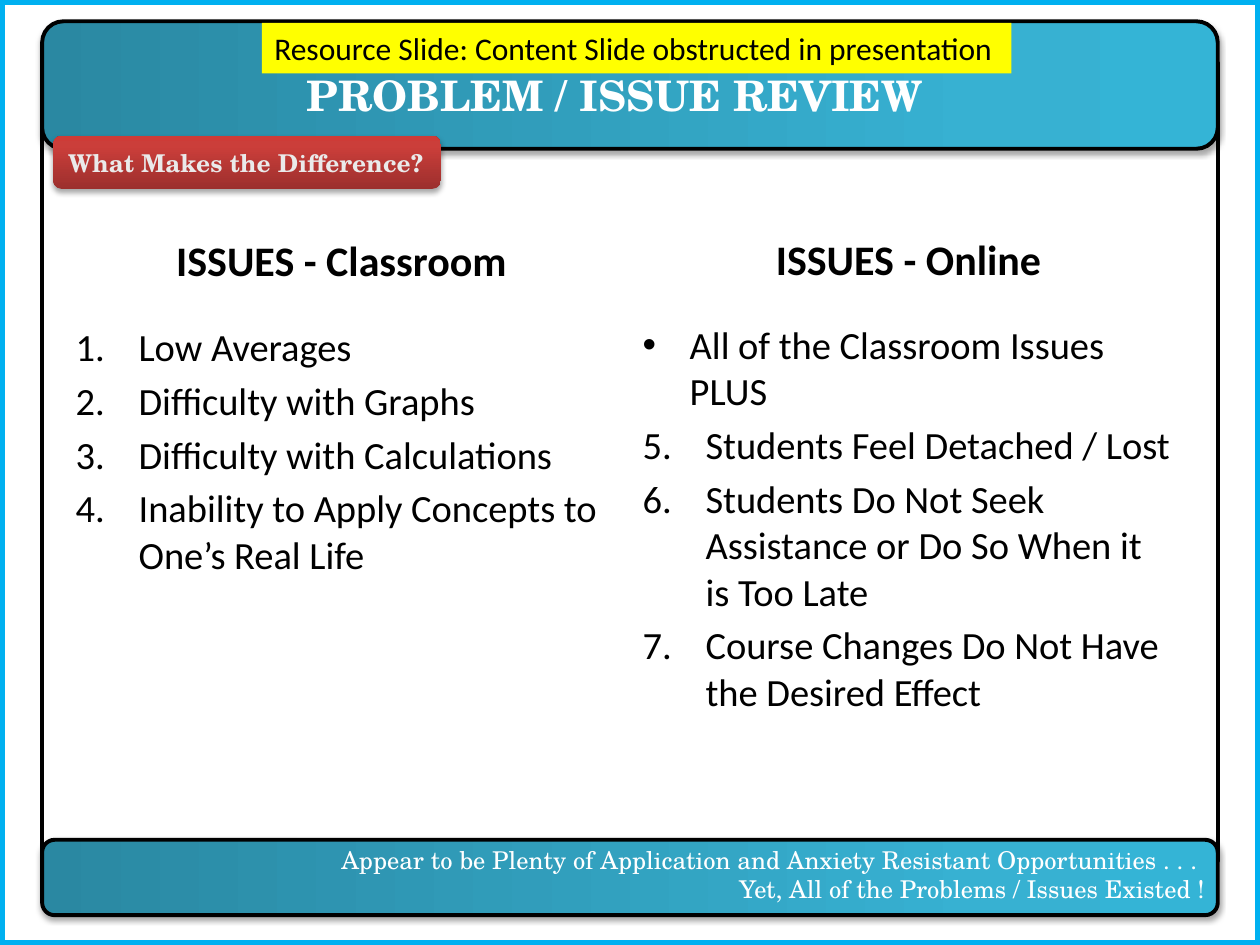
from copy import deepcopy
from dataclasses import dataclass

from lxml.etree import SubElement
from pptx import Presentation
from pptx.dml.color import RGBColor
from pptx.enum.shapes import MSO_SHAPE
from pptx.enum.text import MSO_ANCHOR, MSO_AUTO_SIZE, PP_ALIGN
from pptx.oxml.ns import qn
from pptx.util import Cm, Pt


@dataclass(frozen=True)
class Theme:
    serif: str = "TeX Gyre Schola"
    sans: str = "Calibri"
    white: str = "FFFFFF"
    ink: str = "000000"
    border: str = "00B0F0"
    callout_ink: str = "EAEAEA"
    highlight: str = "FFFF00"
    teal: tuple = ("2A88A2", "37B1D2", "34B4D6")
    red: tuple = ("9C2F2D", "CB3E3A", "CE3B37")
    heading_size: int = 24
    list_size: int = 22
    banner_size: int = 18
    note_size: int = 14


@dataclass(frozen=True)
class Box:
    left: float
    top: float
    width: float
    height: float

    def lengths(self):
        return Cm(self.left), Cm(self.top), Cm(self.width), Cm(self.height)


THEME = Theme()


def add_panel(slide, box, kind, fill=None, line=None, weight=0):
    panel = slide.shapes.add_shape(kind, *box.lengths())
    panel.shadow.inherit = False
    if fill:
        panel.fill.solid()
        panel.fill.fore_color.rgb = RGBColor.from_string(fill)
    if line:
        panel.line.color.rgb = RGBColor.from_string(line)
        panel.line.width = Pt(weight)
    else:
        panel.line.fill.background()
    return panel


def add_band(slide, box, colors, angle, line=None):
    band = add_panel(slide, box, MSO_SHAPE.FLOWCHART_ALTERNATE_PROCESS, line=line, weight=2.25)
    band.fill.gradient()
    band.fill.gradient_angle = angle
    stops = band.element.spPr.find(".//" + qn("a:gsLst"))
    stops.insert(1, deepcopy(stops[0]))
    for stop, position, color in zip(band.fill.gradient_stops, (0, 0.8, 1), colors):
        stop.position = position
        stop.color.rgb = RGBColor.from_string(color)
    effects = band.element.spPr.find(qn("a:effectLst"))
    shadow = SubElement(effects, qn("a:outerShdw"), blurRad=str(Pt(3.1)), dist=str(Pt(1.8)),
                        dir="5400000", rotWithShape="0")
    tint = SubElement(shadow, qn("a:srgbClr"), val=THEME.ink)
    SubElement(tint, qn("a:alpha"), val="35000")
    return band


def place(placeholder, box):
    placeholder.left, placeholder.top, placeholder.width, placeholder.height = box.lengths()
    placeholder.element.getparent().append(placeholder.element)


def write(holder, lines, font, size, color, bold=False, align=PP_ALIGN.LEFT,
          anchor=MSO_ANCHOR.MIDDLE, wrap=True):
    frame = holder.text_frame
    frame.text = "\n".join(lines)
    frame.word_wrap = wrap
    frame.auto_size = MSO_AUTO_SIZE.NONE
    frame.vertical_anchor = anchor
    for paragraph in frame.paragraphs:
        paragraph.alignment = align
        paragraph.font.name = font
        paragraph.font.size = Pt(size)
        paragraph.font.bold = bold
        paragraph.font.color.rgb = RGBColor.from_string(color)
    return frame.paragraphs


def set_marker(paragraph, indent, tag, **settings):
    properties = paragraph._p.get_or_add_pPr()
    properties.set("marL", str(Cm(indent)))
    properties.set("indent", str(-Cm(indent)))
    marker = properties.makeelement(qn(tag), settings)
    properties.insert_element_before(marker, "a:tabLst", "a:defRPr", "a:extLst")


def add_frame(slide, box):
    add_panel(slide, box, MSO_SHAPE.RECTANGLE, THEME.white, THEME.border, 6)
    inner = Box(box.left + 0.85, box.top + 1.27, box.width - 1.7, box.height - 2.97)
    add_panel(slide, inner, MSO_SHAPE.FLOWCHART_PROCESS, THEME.white, THEME.ink, 2.25)


def add_header(slide, box):
    add_band(slide, box, THEME.teal, 0, THEME.ink)
    title = slide.shapes.title
    place(title, Box(box.left + 3.6, box.top + 0.84, 15.88, 1.27))
    write(title, ["PROBLEM / ISSUE REVIEW"], THEME.serif, THEME.heading_size, THEME.white,
          bold=True, align=PP_ALIGN.CENTER)


def add_footer(slide, box):
    add_band(slide, box, THEME.teal, 0, THEME.ink)
    inner = Box(box.left + 0.62, box.top + 0.32, box.width - 0.62, 0.74)
    conclusion = slide.shapes.add_textbox(*inner.lengths())
    write(conclusion, ["Appear to be Plenty of Application and Anxiety Resistant Opportunities . . . ",
                       "Yet, All of the Problems / Issues Existed !"],
          THEME.serif, THEME.note_size, THEME.white, align=PP_ALIGN.RIGHT)


def add_callout(slide, box):
    callout = add_band(slide, box, THEME.red, 90)
    write(callout, ["What Makes the Difference?"], THEME.serif, THEME.note_size,
          THEME.callout_ink, bold=True)


def add_issues(slide, box, first_index, heading, issues, start=1, lead=None):
    heading_height = 1.78
    heading_holder = slide.placeholders[first_index]
    place(heading_holder, Box(box.left, box.top, box.width, heading_height))
    write(heading_holder, [heading], THEME.sans, THEME.heading_size, THEME.ink, bold=True,
          align=PP_ALIGN.CENTER, anchor=MSO_ANCHOR.TOP)

    issue_list = slide.placeholders[first_index + 1]
    place(issue_list, Box(box.left, box.top + heading_height, box.width,
                          box.height - heading_height))
    lines = [lead, *issues] if lead else issues
    paragraphs = write(issue_list, lines, THEME.sans, THEME.list_size, THEME.ink,
                       anchor=MSO_ANCHOR.TOP)
    for paragraph in paragraphs:
        if paragraph.text == lead:
            set_marker(paragraph, 0.95, "a:buChar", char="•")
        else:
            set_marker(paragraph, 1.27, "a:buAutoNum", type="arabicPeriod", startAt=str(start))


def add_banner(slide, box):
    banner = add_panel(slide, box, MSO_SHAPE.RECTANGLE, THEME.highlight)
    write(banner, ["Resource Slide: Content Slide obstructed in presentation"], THEME.sans,
          THEME.banner_size, THEME.ink, anchor=MSO_ANCHOR.TOP, wrap=False)


def main():
    deck = Presentation()
    deck.slide_width, deck.slide_height = Cm(25.4), Cm(19.05)
    slide = deck.slides.add_slide(deck.slide_layouts.get_by_name("Comparison"))
    add_frame(slide, Box(0, 0, 25.4, 19.05))
    add_header(slide, Box(0.85, 0.43, 23.7, 2.57))
    add_footer(slide, Box(0.85, 16.93, 23.7, 1.52))
    add_callout(slide, Box(1.07, 2.74, 7.82, 1.07))
    add_issues(slide, Box(1.27, 4.6, 11.23, 12.75), 1, "ISSUES - Classroom",
               ["Low Averages", "Difficulty with Graphs", "Difficulty with Calculations",
                "Inability to Apply Concepts to One’s Real Life"])
    add_issues(slide, Box(12.7, 4.57, 11.23, 12.75), 3, "ISSUES - Online",
               ["Students Feel Detached / Lost",
                "Students Do Not Seek Assistance or Do So When it is Too Late",
                "Course Changes Do Not Have the Desired Effect"],
               start=5, lead="All of the Classroom Issues PLUS")
    add_banner(slide, Box(5.28, 0.46, 15.11, 1.02))
    deck.save("out.pptx")


if __name__ == "__main__":
    main()
